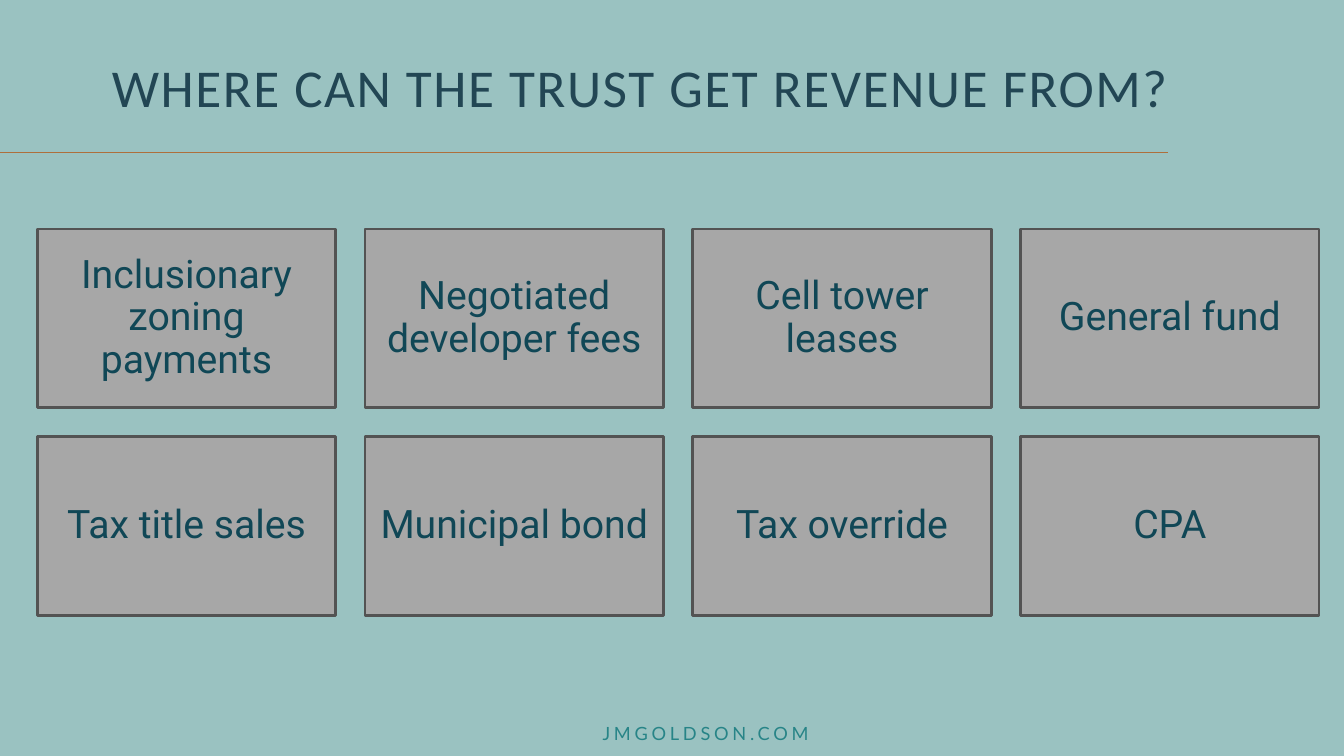
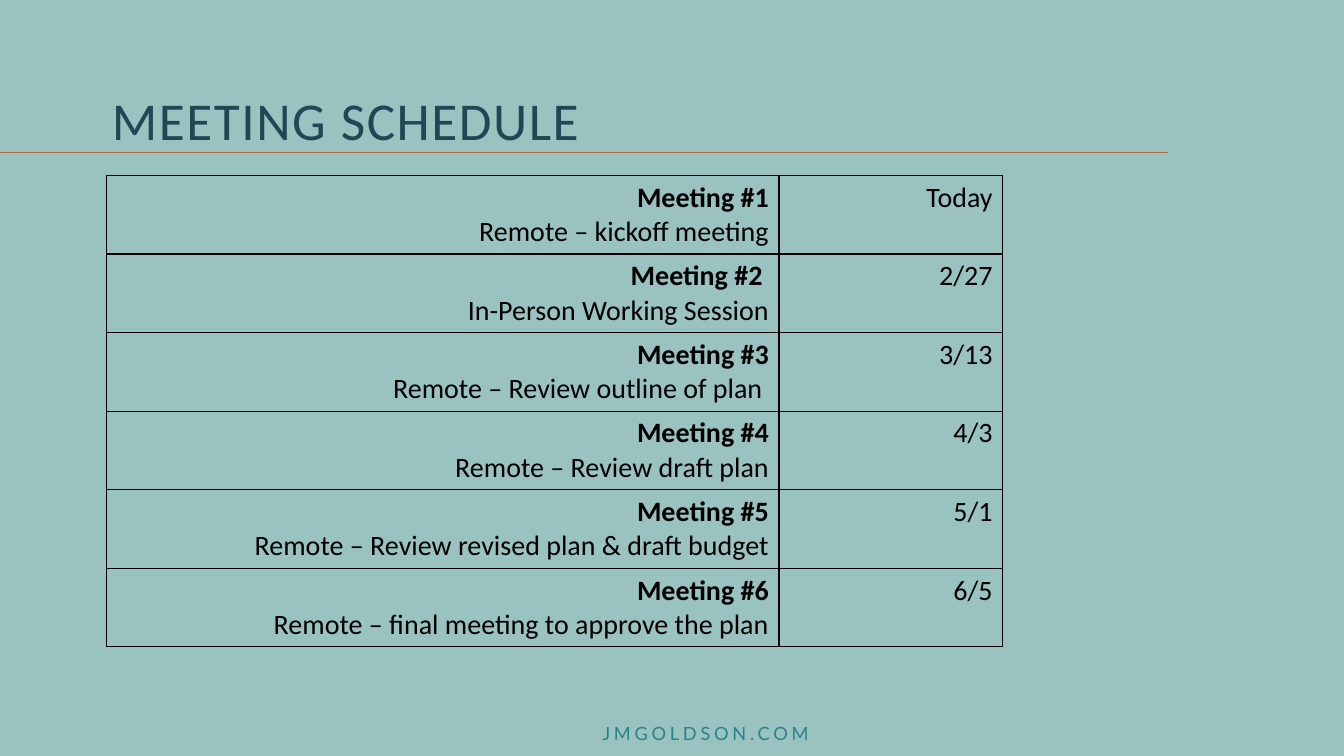
from lxml.etree import SubElement
from pptx import Presentation
from pptx.dml.color import RGBColor
from pptx.enum.shapes import MSO_CONNECTOR as Connector, MSO_SHAPE as Preset
from pptx.enum.text import MSO_ANCHOR as Anchor, PP_ALIGN as Align
from pptx.oxml.ns import qn
from pptx.util import Cm, Pt

COLORS = {
    "background": "9AC2C1",
    "rule": "AE6F3C",
    "title": "224654",
    "footer": "278487",
    "card": "A7A7A7",
    "card_edge": "535353",
    "card_text": "104756",
    "table": "000000",
}
FONTS = {
    "title": {"name": "Calibri", "size": Pt(38)},
    "footer": {"name": "Lato", "size": Pt(13)},
    "card_text": {"name": "Roboto", "size": Pt(28)},
    "table": {"name": "Calibri", "size": Pt(20)},
}
TRACKING = {"title": 1.1, "footer": 2.7}

REVENUE_SOURCES = [
    "Inclusionary zoning payments", "Negotiated developer fees",
    "Cell tower leases", "General fund",
    "Tax title sales", "Municipal bond", "Tax override", "CPA",
]
MEETINGS = [
    ("Meeting #1", "Remote – kickoff meeting", "Today"),
    ("Meeting #2 ", "In-Person Working Session", "2/27"),
    ("Meeting #3", "Remote – Review outline of plan ", "3/13"),
    ("Meeting #4", "Remote – Review draft plan", "4/3"),
    ("Meeting #5", "Remote – Review revised plan & draft budget", "5/1"),
    ("Meeting #6", "Remote – final meeting to approve the plan", "6/5"),
]


def color(role):
    return RGBColor.from_string(COLORS[role])


def assign(target, values):
    for attribute, value in values.items():
        setattr(target, attribute, value)


class Deck:
    def __init__(self):
        self.prs = Presentation()
        assign(self.prs, {"slide_width": Cm(33.87), "slide_height": Cm(19.05)})
        self.slide = None

    def start_slide(self, title, top, width):
        """Open a slide with the shared background, rule, footer and title."""
        self.slide = self.prs.slides.add_slide(self.prs.slide_layouts[6])
        background = self.slide.background.fill
        background.solid()
        background.fore_color.rgb = color("background")
        self.rule(3.84, 29.44)
        self.text_box("JMGOLDSON.COM", "footer", (14.96, 18.06, 5.64, 0.81),
                      Align.CENTER, wrap=False)
        self.text_box(title, "title", (2.69, top, width, 3.68), Align.LEFT,
                      anchor=Anchor.MIDDLE, line_spacing=0.9)

    def rule(self, y, right):
        line = self.slide.shapes.add_connector(
            Connector.STRAIGHT, Cm(0), Cm(y), Cm(right), Cm(y))
        line.line.color.rgb = color("rule")
        line.line.width = Pt(1)
        SubElement(line._element.spPr, qn("a:effectLst"))

    def set_text(self, paragraph, text, role, align, bold=False,
                 line_spacing=None):
        run = paragraph.add_run()
        run.text = text
        assign(run.font, {**FONTS[role], "bold": bold})
        run.font.color.rgb = color(role)
        if role in TRACKING:
            run.font._element.set("spc", str(round(TRACKING[role] * 100)))
        assign(paragraph, {"alignment": align, "line_spacing": line_spacing})

    def fill_frame(self, frame, text, role, align, inset, wrap=True,
                   anchor=Anchor.TOP, line_spacing=None):
        sides = ("left", "top", "right", "bottom")
        assign(frame, {f"margin_{side}": Cm(inset) for side in sides})
        assign(frame, {"word_wrap": wrap, "vertical_anchor": anchor})
        self.set_text(frame.paragraphs[0], text, role, align,
                      line_spacing=line_spacing)

    def text_box(self, text, role, box, align, **layout):
        shape = self.slide.shapes.add_textbox(*map(Cm, box))
        self.fill_frame(shape.text_frame, text, role, align, 0.13, **layout)

    def card(self, text, box):
        shape = self.slide.shapes.add_shape(Preset.RECTANGLE, *map(Cm, box))
        shape.shadow.inherit = False
        shape.fill.solid()
        shape.fill.fore_color.rgb = color("card")
        shape.line.color.rgb = color("card_edge")
        shape.line.width = Pt(2)
        self.fill_frame(shape.text_frame, text, "card_text", Align.CENTER, 0.3,
                        anchor=Anchor.MIDDLE, line_spacing=0.9)

    def card_grid(self, texts, columns, left, top, width, height, gap):
        for index, text in enumerate(texts):
            row, column = divmod(index, columns)
            self.card(text, (left + column * (width + gap),
                             top + row * (height + gap), width, height))

    def schedule(self, meetings, left, top, widths, row_height):
        table = self.slide.shapes.add_table(
            len(meetings), len(widths), Cm(left), Cm(top),
            Cm(sum(widths)), Cm(row_height * len(meetings))).table
        assign(table, {"first_row": False, "horz_banding": False})
        for column, width in zip(table.columns, widths):
            column.width = Cm(width)
        for row, (name, topic, date) in zip(table.rows, meetings):
            row.height = Cm(row_height)
            meeting_cell, date_cell = row.cells
            for cell in row.cells:
                self.outline(cell)
            frame = meeting_cell.text_frame
            self.set_text(frame.paragraphs[0], name, "table", Align.RIGHT,
                          bold=True)
            self.set_text(frame.add_paragraph(), topic, "table", Align.RIGHT)
            self.set_text(date_cell.text_frame.paragraphs[0], date, "table",
                          Align.RIGHT)

    def outline(self, cell):
        """Give a clear cell a thin border on all four sides."""
        properties = cell._tc.get_or_add_tcPr()
        for side in ("lnL", "lnR", "lnT", "lnB"):
            edge = SubElement(properties, qn(f"a:{side}"), w=str(Pt(1)))
            fill = SubElement(edge, qn("a:solidFill"))
            SubElement(fill, qn("a:srgbClr"), val=COLORS["table"])
        cell.fill.background()


def main():
    deck = Deck()
    deck.start_slide("WHERE CAN THE TRUST GET REVENUE FROM?", 0.43, 30.56)
    deck.card_grid(REVENUE_SOURCES, columns=4, left=0.94, top=5.77,
                   width=7.52, height=4.5, gap=0.74)
    deck.start_slide("MEETING SCHEDULE", 1.27, 29.21)
    deck.schedule(MEETINGS, left=2.69, top=4.42, widths=(16.94, 5.64),
                  row_height=1.98)
    deck.prs.save("out.pptx")


if __name__ == "__main__":
    main()
